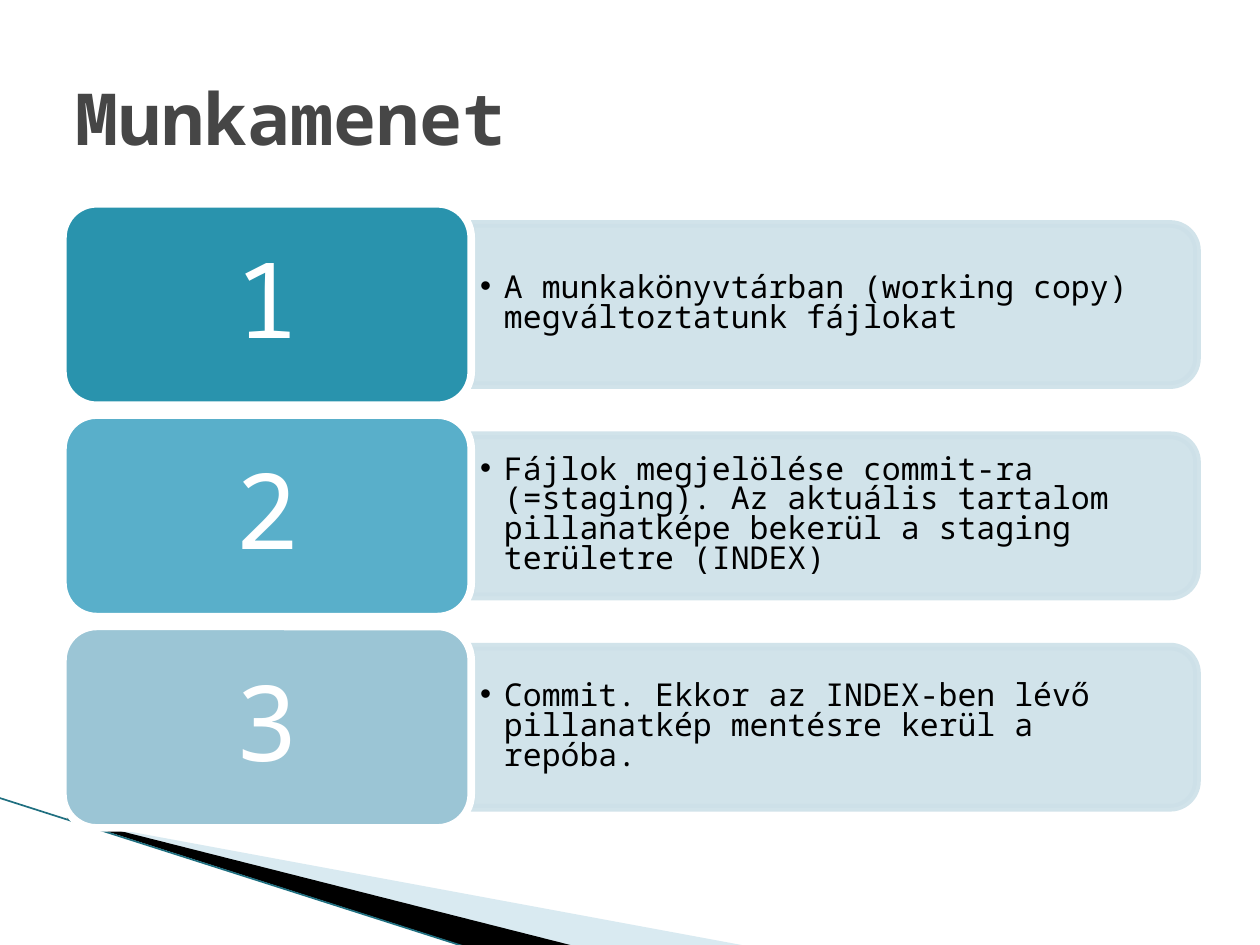
from dataclasses import dataclass

from lxml import etree
from pptx import Presentation
from pptx import util as u
from pptx.dml.color import RGBColor
from pptx.enum import shapes, text
from pptx.oxml import ns

HUES = {
    "title": "464646", "body": "000000", "white": "FFFFFF",
    "panel": "CDE0E8", "light": "A0CBDC", "black": "000000", "edge": "1F6F80",
}
FACE = "Noto Sans Mono"
LEFT, TOP, PITCH = 1.27, 4.11, 4.26        # first card and row step, cm
CARD_W, CARD_H = 8.23, 4.06
PANEL_W, PANEL_H = 14.63, 3.25


@dataclass
class Step:
    num: str
    hue: str
    note: str


@dataclass
class Style:
    size: float
    hue: str
    bold: bool = False
    align: text.PP_ALIGN = text.PP_ALIGN.LEFT
    gap: float = 1.0
    pad: tuple = (0.25, 0.13)              # side and top insets, cm


STEPS = [
    Step("1", "2993AD", "A munkakönyvtárban (working copy) megváltoztatunk fájlokat"),
    Step("2", "59AFCA", "Fájlok megjelölése commit-ra (=staging). Az aktuális tartalom "
                        "pillanatképe bekerül a staging területre (INDEX)"),
    Step("3", "9BC5D5", "Commit. Ekkor az INDEX-ben lévő pillanatkép mentésre kerül a repóba."),
]
HEAD = Style(41, HUES["title"], bold=True)
DIGIT = Style(60, HUES["white"], align=text.PP_ALIGN.CENTER, gap=0.9, pad=(0.84, 0.5))
NOTE = Style(18, HUES["body"], gap=0.79, pad=(0.18, 0.1))


def assign(obj, vals: dict) -> None:
    for key, val in vals.items():
        setattr(obj, key, val)


def paint(shape, fill: str, line: str = "", alpha: int = 100) -> None:
    """Set fill, optional outline and opacity in percent."""
    shape.shadow.inherit = False
    shape.fill.solid()
    shape.fill.fore_color.rgb = RGBColor.from_string(fill)
    if line:
        shape.line.color.rgb = RGBColor.from_string(line)
        shape.line.width = u.Pt(4.33)
    else:
        shape.line.fill.background()
    if alpha < 100:
        for clr in shape._element.spPr.iter(ns.qn("a:srgbClr")):
            etree.SubElement(clr, ns.qn("a:alpha"), val=str(alpha * 1000))


def write(shape, words: str, style: Style):
    """Fill a shape with one styled paragraph and return it."""
    frame = shape.text_frame
    side, top = map(u.Cm, style.pad)
    assign(frame, {
        "word_wrap": True, "vertical_anchor": text.MSO_ANCHOR.MIDDLE,
        "margin_left": side, "margin_right": side,
        "margin_top": top, "margin_bottom": top,
    })
    para = frame.paragraphs[0]
    assign(para, {"alignment": style.align, "line_spacing": style.gap})
    run = para.add_run()
    run.text = words
    assign(run.font, {"name": FACE, "size": u.Pt(style.size), "bold": style.bold})
    run.font.color.rgb = RGBColor.from_string(style.hue)
    return para


def bullet(para) -> None:
    props = para._p.get_or_add_pPr()
    props.set("marL", str(u.Cm(0.48)))
    props.set("indent", str(-u.Cm(0.48)))
    etree.SubElement(props, ns.qn("a:buFont"), typeface="Arial")
    etree.SubElement(props, ns.qn("a:buChar"), char="•")


def wedge(slide, spots: list, hue: str, alpha: int = 100) -> None:
    first, *rest = [(u.Cm(x), u.Cm(y)) for x, y in spots]
    pen = slide.shapes.build_freeform(*first)
    pen.add_line_segments(rest, close=True)
    paint(pen.convert_to_shape(), hue, alpha=alpha)


def draw_step(slide, step: Step, top: float) -> None:
    mid = top + CARD_H / 2
    right = LEFT + CARD_W
    # Panel: upright shape turned a quarter so its round corners face right
    panel = slide.shapes.add_shape(
        shapes.MSO_SHAPE.ROUND_2_SAME_RECTANGLE,
        u.Cm(right + (PANEL_W - PANEL_H) / 2), u.Cm(mid - PANEL_W / 2),
        u.Cm(PANEL_H), u.Cm(PANEL_W))
    panel.rotation = 90
    paint(panel, HUES["panel"], HUES["panel"], 90)
    # Note on the panel
    note = slide.shapes.add_textbox(
        u.Cm(right), u.Cm(mid - 1.46), u.Cm(14.48), u.Cm(2.92))
    bullet(write(note, step.note, NOTE))
    # Numbered card
    card = slide.shapes.add_shape(
        shapes.MSO_SHAPE.ROUNDED_RECTANGLE,
        u.Cm(LEFT), u.Cm(top), u.Cm(CARD_W), u.Cm(CARD_H))
    paint(card, step.hue, HUES["white"])
    write(card, step.num, DIGIT)


def main() -> None:
    deck = Presentation()
    assign(deck, {"slide_width": u.Cm(25.4), "slide_height": u.Cm(19.05)})
    slide = deck.slides.add_slide(deck.slide_layouts[6])

    # Corner wedges and edge line
    wedge(slide, [(1.4, 16.54), (15.11, 19.08), (11.58, 19.08), (1.4, 16.51)],
          HUES["light"], 40)
    wedge(slide, [(1.35, 16.48), (11.61, 19.08), (9.45, 19.1), (1.37, 16.51)],
          HUES["black"])
    edge = slide.shapes.add_connector(
        shapes.MSO_CONNECTOR.STRAIGHT, u.Cm(-0.03), u.Cm(16.08), u.Cm(9.42), u.Cm(19.1))
    edge.line.color.rgb = RGBColor.from_string(HUES["edge"])
    edge.line.width = u.Pt(0.95)
    etree.SubElement(edge._element.spPr, ns.qn("a:effectLst"))

    # Steps
    for row, step in enumerate(STEPS):
        draw_step(slide, step, TOP + row * PITCH)

    # Title
    title = slide.shapes.add_textbox(u.Cm(1.27), u.Cm(0.76), u.Cm(22.86), u.Cm(3.18))
    write(title, "Munkamenet", HEAD)

    deck.save("out.pptx")


if __name__ == "__main__":
    main()
